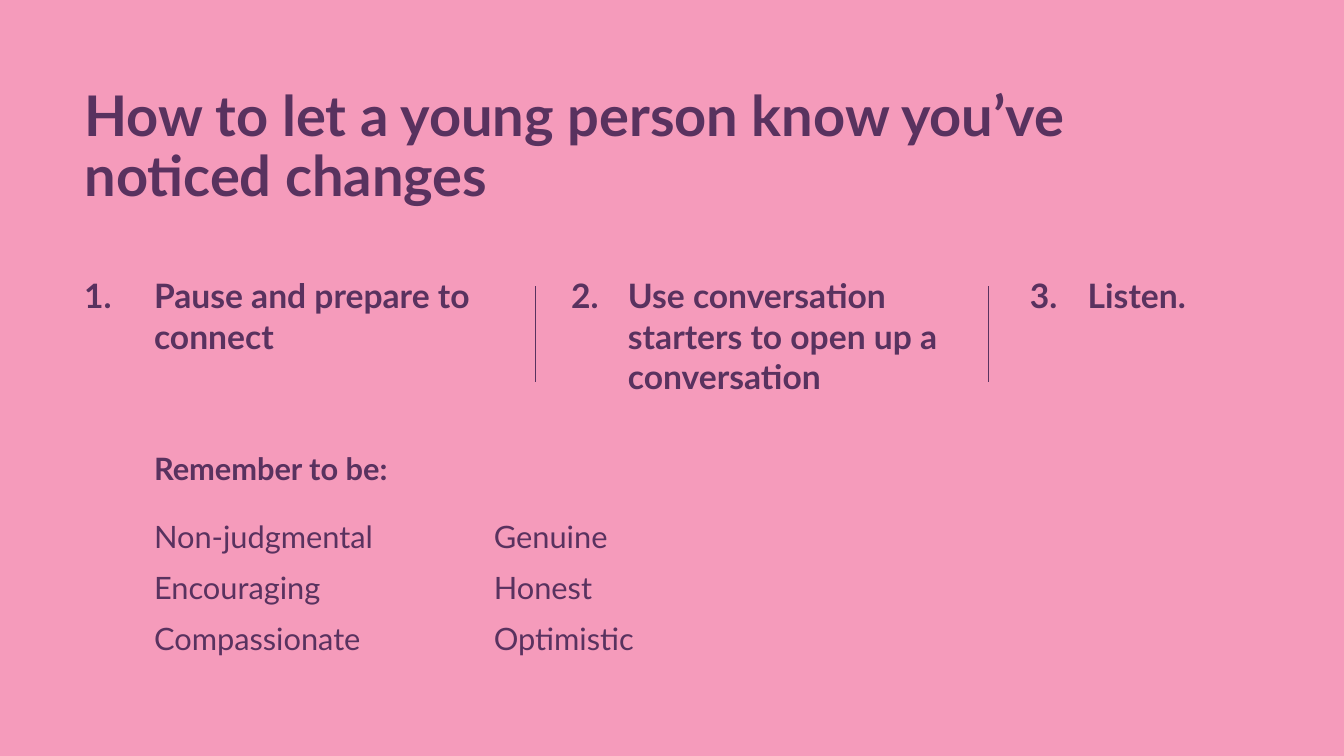
from lxml import etree
from pptx import Presentation
from pptx.dml.color import RGBColor
from pptx.enum.shapes import MSO_CONNECTOR as Line
from pptx.enum.text import MSO_ANCHOR as Anchor, PP_ALIGN as Align
from pptx.oxml.ns import qn
from pptx.util import Inches, Pt

# Content
TITLE = "How to let a young person know you’ve noticed changes"
# Each step: number left, text left, text width, text height, text
STEPS = [
    (0.52, 1.43, 3.85, 0.91, "Pause and prepare to connect"),
    (5.35, 6.13, 3.47, 1.31, "Use conversation starters to open up a conversation"),
    (9.9, 10.69, 2.5, 0.5, "Listen."),
]
RULES = [5.31, 9.8]
HEAD = "Remember to be:"
TRAITS = [
    (1.43, ["Non-judgmental", "Encouraging", "Compassionate"]),
    (4.8, ["Genuine", "Honest", "Optimistic"]),
]

# Style
PINK = RGBColor(0xF5, 0x9B, 0xBB)
PLUM = RGBColor(0x59, 0x32, 0x5F)
FONT = "Lato"
STEP_TOP = 2.68

deck = Presentation()
deck.slide_width, deck.slide_height = Inches(13.33), Inches(7.5)
slide = deck.slides.add_slide(deck.slide_layouts[6])
fill = slide.background.fill
fill.solid()
fill.fore_color.rgb = PINK


def add_text(left, top, width, height, lines, size, bold=True,
             anchor=Anchor.TOP, align=Align.LEFT, gap=0, pitch=None):
    box = slide.shapes.add_textbox(
        Inches(left), Inches(top), Inches(width), Inches(height))
    frame = box.text_frame
    frame.word_wrap = True
    frame.vertical_anchor = anchor
    frame.text = "\n".join(lines)
    for i, para in enumerate(frame.paragraphs):
        para.alignment = align
        if i:
            para.space_before = Pt(gap)
        if pitch:
            para.line_spacing = pitch
        for run in para.runs:
            font = run.font
            font.name, font.size, font.bold = FONT, Pt(size), bold
            font.color.rgb = PLUM


# Title
add_text(0.74, 0.82, 9.94, 1.52, [TITLE], 40, pitch=0.9)

# Numbered steps
for num, (mark, left, width, height, text) in enumerate(STEPS, 1):
    add_text(mark, STEP_TOP, 0.9, 0.5, [f"{num}."], 24, align=Align.CENTER)
    add_text(left, STEP_TOP, width, height, [text], 24)

# Rules between steps
for x in RULES:
    rule = slide.shapes.add_connector(
        Line.STRAIGHT, Inches(x), Inches(2.84), Inches(x), Inches(3.79))
    rule.line.color.rgb = PLUM
    rule.line.width = Pt(0.5)
    etree.SubElement(rule._element.spPr, qn("a:effectLst"))

# Traits to remember
add_text(1.43, 4.64, 2.86, 0.24, [HEAD], 22, anchor=Anchor.BOTTOM)
for left, names in TRAITS:
    add_text(left, 5.04, 3.88, 1.52, names, 22, bold=False,
             anchor=Anchor.BOTTOM, gap=10)

deck.save("out.pptx")
